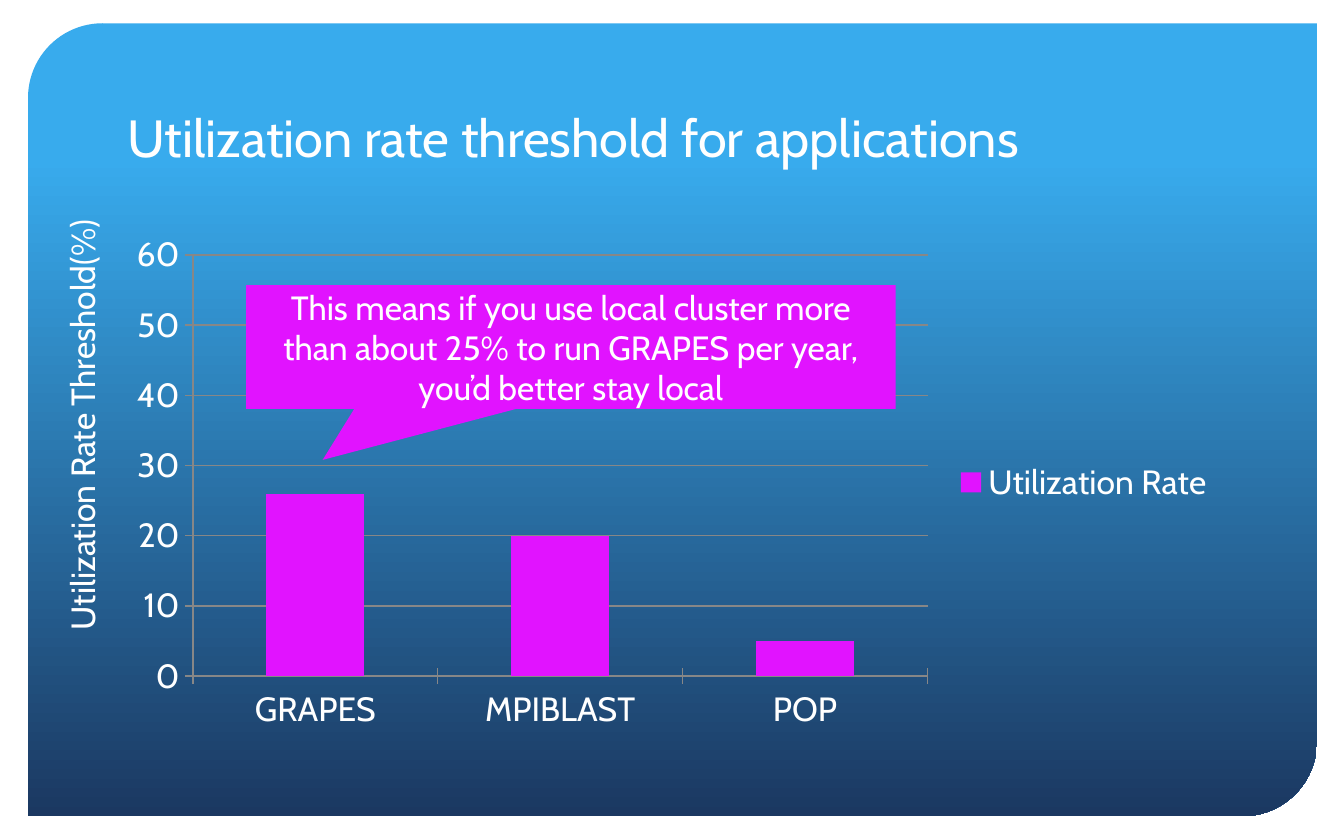
from pptx import Presentation
from pptx.chart.data import CategoryChartData
from pptx.dml.color import RGBColor
from pptx.enum.chart import XL_CHART_TYPE, XL_LEGEND_POSITION, XL_TICK_MARK
from pptx.enum.shapes import MSO_SHAPE
from pptx.enum.text import MSO_ANCHOR, PP_ALIGN
from pptx.util import Pt

FONT = "Cabin"
COLORS = {
    "white": "FFFFFF",
    "sky": "38ABED",
    "navy": "1B3861",
    "magenta": "E113FF",
    "grid": "878787",
}


def color(name):
    return RGBColor.from_string(COLORS[name])


def style_font(font, size=18):
    font.name = FONT
    font.size = Pt(size)
    font.color.rgb = color("white")


def write_text(shape, text, size=18, align=PP_ALIGN.LEFT,
               anchor=MSO_ANCHOR.TOP, wrap=True, vertical=None):
    frame = shape.text_frame
    frame.word_wrap = wrap
    frame.vertical_anchor = anchor
    if vertical:
        frame._txBody.bodyPr.set("vert", vertical)
    paragraph = frame.paragraphs[0]
    paragraph.alignment = align
    run = paragraph.add_run()
    run.text = text
    style_font(run.font, size)


def add_text(slide, box, text, **text_format):
    shape = slide.shapes.add_textbox(*map(Pt, box))
    write_text(shape, text, **text_format)


def add_plain_shape(slide, kind, box, adjustments):
    shape = slide.shapes.add_shape(kind, *map(Pt, box))
    for index, value in enumerate(adjustments):
        shape.adjustments[index] = value
    shape.shadow.inherit = False
    shape.line.fill.background()
    return shape


def add_background(slide):
    panel = add_plain_shape(slide, MSO_SHAPE.ROUND_2_DIAG_RECTANGLE,
                            (15, 12.5, 690.5, 424.8), (0.094, 0))
    panel.fill.gradient()
    panel.fill.gradient_angle = 270
    stops = ((0.17, "sky"), (1, "navy"))
    for stop, (position, name) in zip(panel.fill.gradient_stops, stops):
        stop.position = position
        stop.color.rgb = color(name)


def add_threshold_chart(slide, box):
    data = CategoryChartData()
    data.categories = ["GRAPES", "MPIBLAST", "POP"]
    data.add_series("Utilization Rate", (26, 20, 5))
    chart = slide.shapes.add_chart(
        XL_CHART_TYPE.COLUMN_STACKED, *map(Pt, box), data).chart
    chart.has_title = False
    style_font(chart.font)

    # Bars
    plot = chart.plots[0]
    plot.gap_width = 150
    plot.overlap = 100
    plot.vary_by_categories = False
    fill = plot.series[0].format.fill
    fill.solid()
    fill.fore_color.rgb = color("magenta")

    # Axes
    value_axis = chart.value_axis
    value_axis.minimum_scale = 0
    value_axis.maximum_scale = 60
    value_axis.major_unit = 10
    value_axis.has_major_gridlines = True
    for axis in (chart.category_axis, value_axis):
        axis.major_tick_mark = XL_TICK_MARK.CROSS
        style_font(axis.tick_labels.font)
    for lined in (chart.category_axis, value_axis, value_axis.major_gridlines):
        lined.format.line.color.rgb = color("grid")
        lined.format.line.width = Pt(0.75)

    # Legend
    chart.has_legend = True
    chart.legend.position = XL_LEGEND_POSITION.RIGHT
    chart.legend.include_in_layout = False
    style_font(chart.legend.font)


def add_callout(slide, box, text):
    callout = add_plain_shape(slide, MSO_SHAPE.RECTANGULAR_CALLOUT, box,
                              (-0.382, 0.914))
    callout.fill.solid()
    callout.fill.fore_color.rgb = color("magenta")
    write_text(callout, text, align=PP_ALIGN.CENTER, anchor=MSO_ANCHOR.MIDDLE)


def main():
    presentation = Presentation()
    presentation.slide_width = Pt(720)
    presentation.slide_height = Pt(450)
    slide = presentation.slides.add_slide(presentation.slide_layouts[6])

    # Panel and title
    add_background(slide)
    add_text(slide, (61.2, 25.2, 597, 68.4),
             "Utilization rate threshold for applications",
             size=28, anchor=MSO_ANCHOR.BOTTOM)

    # Chart with its axis caption
    add_threshold_chart(slide, (61.2, 120.2, 597, 276.5))
    add_text(slide, (29.5, 100.8, 36, 244), "Utilization Rate Threshold(%)",
             wrap=False, vertical="vert270")

    # Remark on the first bar
    add_callout(slide, (131.8, 152.8, 348, 66.2),
                "This means if you use local cluster more than about 25% "
                "to run GRAPES per year, you’d better stay local")

    presentation.save("out.pptx")


if __name__ == "__main__":
    main()
